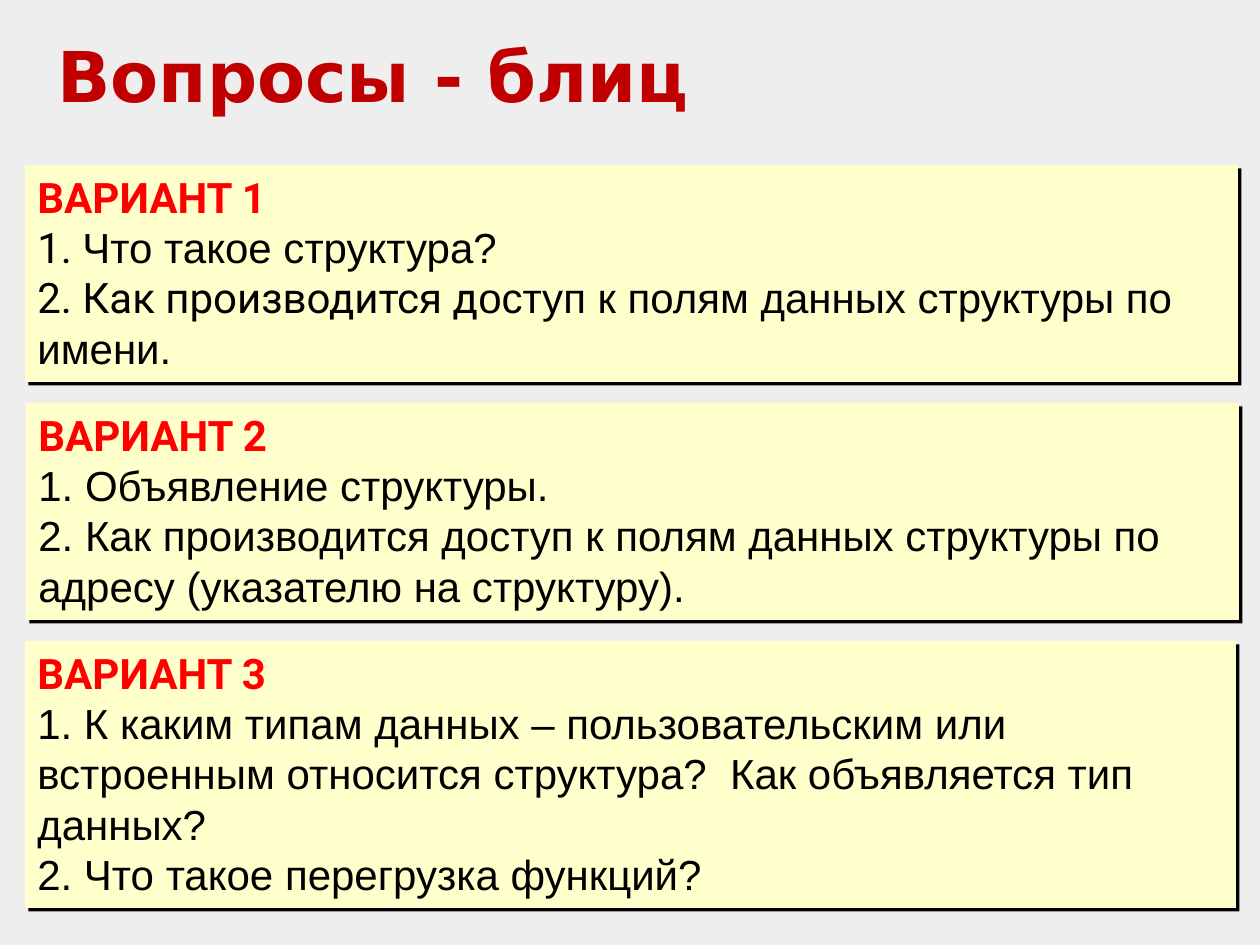
"""Build the slide with three variants of quick quiz questions."""
import pptx
import pptx.dml.color
import pptx.enum.shapes
import pptx.enum.text
import pptx.oxml
import pptx.oxml.ns
import pptx.util
from dataclasses import dataclass


@dataclass(frozen=True)
class Theme:
    background: str = "EEEEEE"
    card: str = "FFFFCC"
    shadow: str = "000000"
    title: str = "C00000"
    heading: str = "FF0000"
    text: str = "000000"
    title_font: str = "DejaVu Sans"
    heading_font: str = "Roboto"
    text_font: str = "Arial"
    title_size: int = 40
    text_size: int = 24


theme = Theme()
PX = 914400 / 126


def px(length):
    return pptx.util.Emu(round(length * PX))


def style(font, size, color, bold):
    font.size = pptx.util.Pt(size)
    font.bold = bold
    font.color.rgb = pptx.dml.color.RGBColor.from_string(color)


SHADOW = (
    f'<a:effectLst {pptx.oxml.ns.nsdecls("a")}>'
    '<a:outerShdw dist="35560" dir="2700000" algn="ctr" rotWithShape="0">'
    f'<a:srgbClr val="{theme.shadow}"/></a:outerShdw></a:effectLst>'
)

roboto, arial = theme.heading_font, theme.text_font
variants = [
    ((25, 165, 1213, 217), [
        [("1. ", roboto), ("Что такое структура?", arial)],
        [("2. Как производится д", roboto),
         ("оступ к полям данных структуры по имени.", arial)],
    ]),
    ((26, 403, 1213, 217), [
        [("1. Объявление структуры.", arial)],
        [("2. Как производится доступ к полям данных структуры по "
          "адресу (указателю на структуру).", arial)],
    ]),
    ((25, 641, 1211, 267), [
        [("1. К каким типам данных – пользовательским или встроенным "
          "относится структура?  Как объявляется тип данных?", arial)],
        [("2. Что такое перегрузка функций?", arial)],
    ]),
]

deck = pptx.Presentation()
deck.slide_width, deck.slide_height = px(1260), px(945)
page = deck.slides.add_slide(deck.slide_layouts[5])
page.background.fill.solid()
page.background.fill.fore_color.rgb = pptx.dml.color.RGBColor.from_string(theme.background)

title = page.shapes.title
title.left, title.top, title.width, title.height = map(px, (45, 26, 1169, 97))
title.text_frame.vertical_anchor = pptx.enum.text.MSO_ANCHOR.TOP
title.text_frame.auto_size = pptx.enum.text.MSO_AUTO_SIZE.NONE
para = title.text_frame.paragraphs[0]
para.text = "Вопросы - блиц"
para.alignment = pptx.enum.text.PP_ALIGN.LEFT
para.font.name = theme.title_font
style(para.font, theme.title_size, theme.title, True)

for number, (place, questions) in enumerate(variants, 1):
    box = page.shapes.add_shape(pptx.enum.shapes.MSO_SHAPE.RECTANGLE, *map(px, place))
    box.fill.solid()
    box.fill.fore_color.rgb = pptx.dml.color.RGBColor.from_string(theme.card)
    box.line.fill.background()
    box._element.spPr.append(pptx.oxml.parse_xml(SHADOW))

    frame = box.text_frame
    frame.word_wrap = True
    frame.vertical_anchor = pptx.enum.text.MSO_ANCHOR.TOP
    for index, spans in enumerate([[(f"ВАРИАНТ {number}", roboto)], *questions]):
        para = frame.add_paragraph() if index else frame.paragraphs[0]
        para.alignment = pptx.enum.text.PP_ALIGN.LEFT
        color = theme.text if index else theme.heading
        style(para.font, theme.text_size, color, index == 0)
        for text, font_name in spans:
            span = para.add_run()
            span.text = text
            target = para if len(spans) == 1 else span
            target.font.name = font_name

deck.save("out.pptx")
